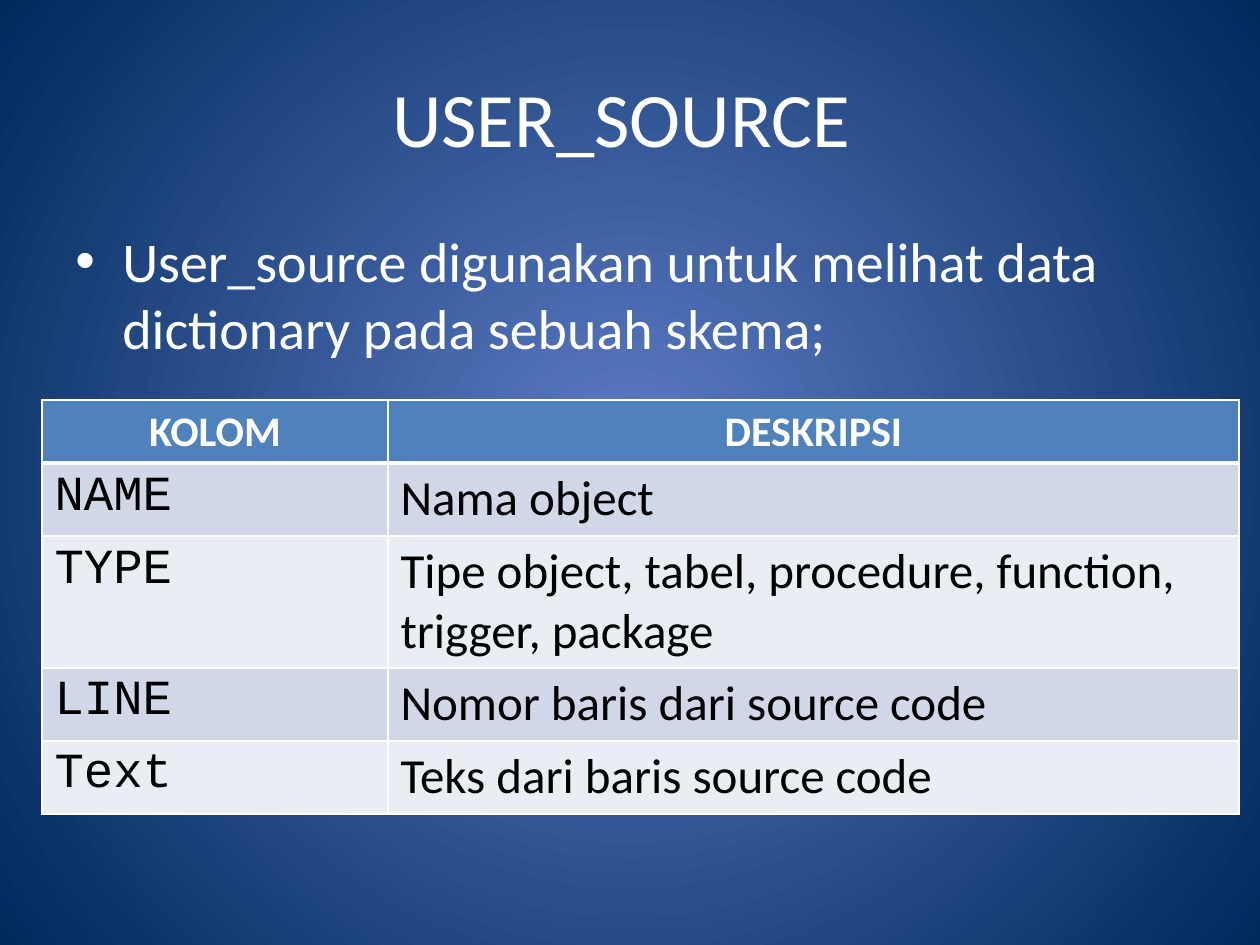
from lxml import etree
from pptx import Presentation
from pptx.dml.color import RGBColor
from pptx.enum.text import MSO_ANCHOR, PP_ALIGN
from pptx.oxml.ns import qn
from pptx.util import Emu, Pt

CENTER, LEFT = PP_ALIGN.CENTER, PP_ALIGN.LEFT
MIDDLE = MSO_ANCHOR.MIDDLE
TITLE_ONLY = 5
SANS, MONO = "Calibri", "Courier New"
COLORS = {
    "white": "FFFFFF", "black": "000000", "glow": "5E7CC5", "navy": "00295C",
    "header": "4F81BD", "odd": "D0D8E8", "even": "E9EDF4",
}
COLUMN_WIDTHS = (346, 851)
ROW_HEIGHTS = (63, 73, 132, 73, 73)
HEADINGS = ("KOLOM", "DESKRIPSI")
ENTRIES = (
    ("NAME", "Nama object"),
    ("TYPE", "Tipe object, tabel, procedure, function, trigger, package"),
    ("LINE", "Nomor baris dari source code"),
    ("Text", "Teks dari baris source code"),
)


def px(length):
    """Turn pixels into EMU."""
    return Emu(round(length * 914400 / 126))


def rgb(name):
    """Look up a named colour."""
    return RGBColor.from_string(COLORS[name])


def write(frame, text, *, size, font=SANS, color="white", bold=False, align=LEFT):
    """Write one formatted paragraph into a text frame and return it."""
    frame.word_wrap = True
    paragraph = frame.paragraphs[0]
    paragraph.alignment = align
    run = paragraph.add_run()
    run.text = text
    run.font.size, run.font.name, run.font.bold = Pt(size), font, bold
    run.font.color.rgb = rgb(color)
    return paragraph


def paint_background(slide):
    """Fill the slide with a glow that darkens from its centre."""
    fill = slide.background.fill
    fill.gradient()
    for stop, name in zip(fill.gradient_stops, ("glow", "navy")):
        stop.color.rgb = rgb(name)
    gradient = slide.element.find(".//" + qn("a:gradFill"))
    linear = gradient.find(qn("a:lin"))
    circle = etree.Element(qn("a:path"), path="circle")
    etree.SubElement(circle, qn("a:fillToRect"), l="50000", t="50000", r="50000", b="50000")
    gradient.replace(linear, circle)


def place_title(slide, left, top, width, height):
    """Place the slide title in its box."""
    title = slide.shapes.title
    title.left, title.top, title.width, title.height = map(px, (left, top, width, height))
    title.text_frame.vertical_anchor = MIDDLE
    write(title.text_frame, "USER_SOURCE ", size=44, align=CENTER)


def place_summary(slide, left, top, width, height):
    """Place the bulleted summary in its box."""
    summary = slide.shapes.add_textbox(*map(px, (left, top, width, height)))
    paragraph = write(
        summary.text_frame,
        "User_source digunakan untuk melihat data dictionary pada sebuah skema;",
        size=32,
    )
    paragraph.space_before = Pt(6.4)
    properties = paragraph._p.get_or_add_pPr()
    properties.set("marL", str(px(47)))
    properties.set("indent", str(px(-47)))
    etree.SubElement(properties, qn("a:buFont"), typeface="Arial")
    etree.SubElement(properties, qn("a:buChar"), char="•")


def border_cell(cell, **widths):
    """Draw white cell borders, one point wide unless a side is given."""
    properties = cell._tc.get_or_add_tcPr()
    for side in "LRTB":
        line = etree.SubElement(properties, qn("a:ln" + side), w=str(Pt(widths.get(side, 1))))
        solid = etree.SubElement(line, qn("a:solidFill"))
        etree.SubElement(solid, qn("a:srgbClr"), val=COLORS["white"])


def fill_cell(cell, text, fill, borders, **style):
    """Set the borders, fill and text of one table cell."""
    border_cell(cell, **borders)
    cell.fill.solid()
    cell.fill.fore_color.rgb = rgb(fill)
    write(cell.text_frame, text, **style)


def place_columns_table(slide, left, top):
    """Place the table that describes the view's columns."""
    box = (left, top, sum(COLUMN_WIDTHS), sum(ROW_HEIGHTS))
    table = slide.shapes.add_table(len(ROW_HEIGHTS), len(COLUMN_WIDTHS), *map(px, box)).table
    for column, width in zip(table.columns, COLUMN_WIDTHS):
        column.width = px(width)
    for row, height in zip(table.rows, ROW_HEIGHTS):
        row.height = px(height)
    for index, heading in enumerate(HEADINGS):
        fill_cell(table.cell(0, index), heading, "header", {"B": 3},
                  size=24, bold=True, align=CENTER)
    for number, entry in enumerate(ENTRIES, start=1):
        fill = "odd" if number % 2 else "even"
        borders = {"T": 3} if number == 1 else {}
        for index, (text, font) in enumerate(zip(entry, (MONO, SANS))):
            fill_cell(table.cell(number, index), text, fill, borders,
                      size=28, font=font, color="black")


def main():
    """Build and save the slide."""
    deck = Presentation()
    deck.slide_width, deck.slide_height = px(1260), px(945)
    slide = deck.slides.add_slide(deck.slide_layouts[TITLE_ONLY])
    paint_background(slide)
    place_title(slide, 63, 38, 1134, 157)
    place_summary(slide, 63, 220, 1134, 624)
    place_columns_table(slide, 42, 400)
    deck.save("out.pptx")


if __name__ == "__main__":
    main()
